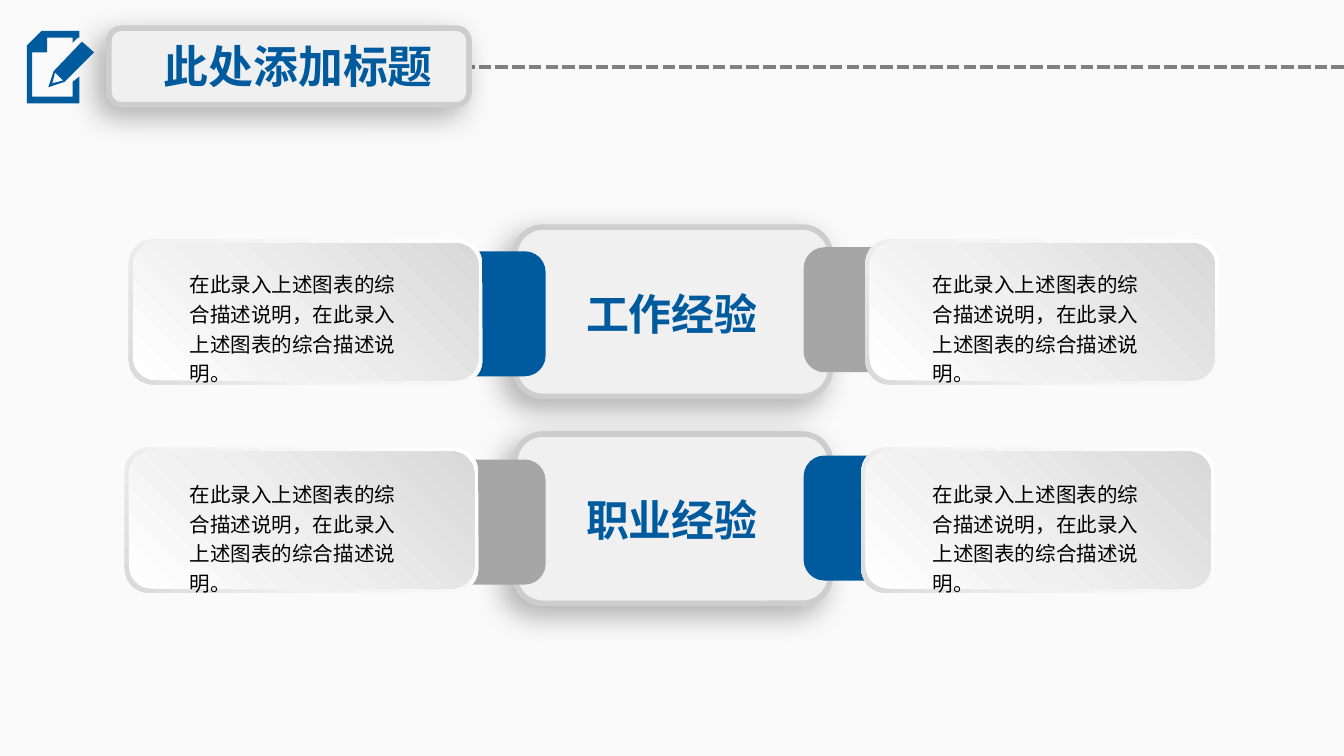
"""Build a slide with two experience panels, each flanked by description cards."""
from copy import deepcopy

from lxml import etree
from pptx import Presentation
from pptx import util as u
from pptx.dml.color import RGBColor
from pptx.enum import dml, shapes, text
from pptx.oxml import ns

PX = 9144
BLUE, GRAY = "005A9E", "A6A6A6"
DESCRIPTION = "在此录入上述图表的综合描述说明，在此录入上述图表的综合描述说明。"


def rgb(value):
    return RGBColor.from_string(value)


def set_gradient(fill, angle, stops):
    fill.gradient()
    fill.gradient_angle = angle
    first = fill.gradient_stops[0]._gs
    for _ in stops[2:]:
        first.addnext(deepcopy(first))
    for stop, (position, color) in zip(fill.gradient_stops, stops):
        stop.position = position
        stop.color.rgb = rgb(color)


presentation = Presentation()
presentation.slide_width = 1000 * PX
presentation.slide_height = presentation.slide_width * 9 // 16
slide = presentation.slides.add_slide(presentation.slide_layouts[5])
set_gradient(slide.background.fill, 270, [(0, "FAFAFA"), (1, "FCFCFC")])

rule = slide.shapes.add_connector(shapes.MSO_CONNECTOR.STRAIGHT, 1000 * PX, 50 * PX, 319 * PX, 50 * PX)
rule.line.color.rgb = rgb("808080")
rule.line.width = u.Pt(2.25)
rule.line.dash_style = dml.MSO_LINE.SQUARE_DOT
etree.SubElement(rule._element.spPr, ns.qn("a:effectLst"))

for box in [(81, 21, 268, 57), (383, 169, 235, 126), (383, 323, 235, 126)]:
    panel = slide.shapes.add_shape(shapes.MSO_SHAPE.ROUNDED_RECTANGLE, *[n * PX for n in box])
    set_gradient(panel.fill, 315, [(0, "F0F0F0"), (1, "F1F1F1")])
    panel.line.color.rgb = rgb("CDCDCD")
    panel.line.width = u.Pt(3)
    panel.shadow.inherit = False
    effects = panel._element.spPr.find(ns.qn("a:effectLst"))
    shadow = etree.SubElement(effects, ns.qn("a:outerShdw"), blurRad=str(u.Pt(16)), dist=str(u.Pt(7)),
                              dir="8100000", algn="tr", rotWithShape="0")
    color = etree.SubElement(shadow, ns.qn("a:srgbClr"), val="000000")
    etree.SubElement(color, ns.qn("a:alpha"), val="30000")

title = slide.shapes.title
title.left, title.top, title.width, title.height = [n * PX for n in (112, 24, 222, 50)]
slide.shapes._spTree.append(title._element)
title.text_frame.text = "此处添加标题"
title.text_frame.word_wrap = False
title.text_frame.auto_size = text.MSO_AUTO_SIZE.NONE
title.text_frame.vertical_anchor = text.MSO_ANCHOR.MIDDLE
paragraph = title.text_frame.paragraphs[0]
paragraph.alignment = text.PP_ALIGN.LEFT
font = paragraph.runs[0].font
font.name, font.size, font.bold = "Arial", u.Pt(24), True
font.color.rgb = rgb(BLUE)

page = [(54, 72), (24, 72), (24, 39), (35, 39), (35, 28), (54, 28), (54, 32), (58, 28), (59, 28),
        (59, 23), (31, 23), (20, 34), (20, 77), (59, 77), (59, 57), (54, 61)]
pencil = [(40, 53), (36, 65), (48, 61), (70, 39), (61, 31)]
pencil_tip = [(47, 60), (39, 62), (41, 54)]
for outline, *holes in [(page,), (pencil, pencil_tip)]:
    builder = slide.shapes.build_freeform(*outline[0], scale=PX)
    builder.add_line_segments(outline[1:])
    for hole in holes:
        builder.move_to(*hole[0])
        builder.add_line_segments(hole[1:])
    icon = builder.convert_to_shape()
    icon.fill.solid()
    icon.fill.fore_color.rgb = rgb(BLUE)
    icon.line.fill.background()
    icon.shadow.inherit = False

card_layers = [(0, 225, [(0, "FFFFFF"), (0.62, "F2F2F2"), (1, "D9D9D9")]),
               (3, 45, [(0, "FFFFFF"), (0.42, "F0F0F0"), (1, "D9D9D9")])]
plates = [(179, 187, BLUE), (179, 342, GRAY), (96, 178, None), (93, 333, None),
          (598, 184, GRAY), (598, 339, BLUE), (644, 178, None), (641, 333, None)]
for left, top, tab_color in plates:
    width, height = (227, 93) if tab_color else (263, 108)
    for inset, angle, stops in card_layers:
        box = (left + inset, top + inset, width - 2 * inset, height - 2 * inset)
        plate = slide.shapes.add_shape(shapes.MSO_SHAPE.ROUNDED_RECTANGLE, *[n * PX for n in box])
        if tab_color:
            plate.fill.solid()
            plate.fill.fore_color.rgb = rgb(tab_color)
        else:
            set_gradient(plate.fill, angle, stops)
        plate.line.fill.background()
        plate.shadow.inherit = False

labels = [((429, top, 172, 46), words, 23, BLUE, True, 1)
          for top, words in [(210, "工作经验"), (363, "职业经验")]]
labels += [((left, top, 177, 96), DESCRIPTION, 11, "000000", False, 1.2)
           for top in (195, 351) for left in (134, 687)]
for box, words, size, color, bold, spacing in labels:
    label = slide.shapes.add_textbox(*[n * PX for n in box])
    frame = label.text_frame
    frame.text = words
    frame.word_wrap = True
    frame.margin_left = frame.margin_right = 7 * PX
    frame.margin_top = frame.margin_bottom = 4 * PX
    frame.paragraphs[0].line_spacing = spacing
    font = frame.paragraphs[0].runs[0].font
    font.name, font.size, font.bold = "Arial", u.Pt(size), bold
    font.color.rgb = rgb(color)

presentation.save("out.pptx")
